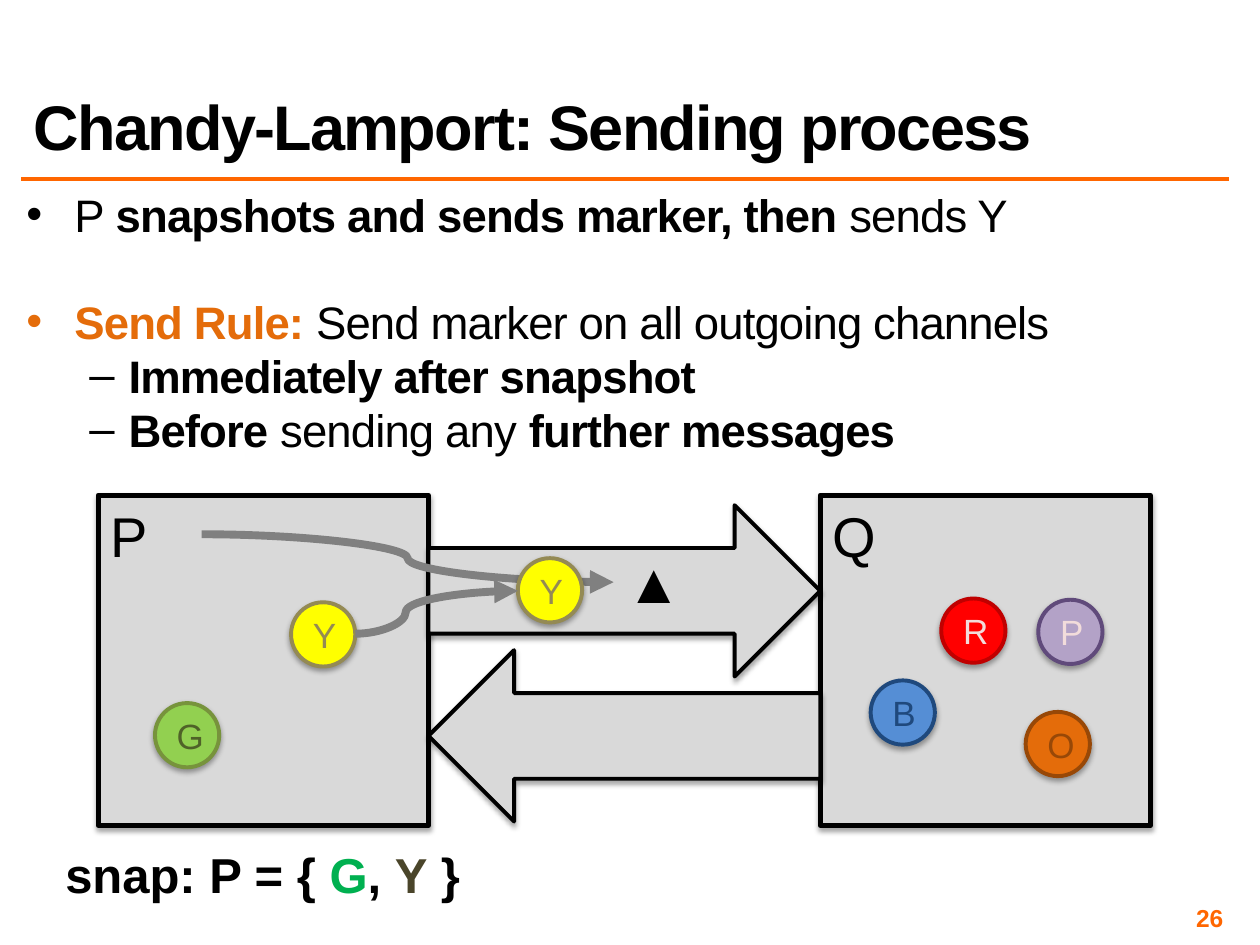
from lxml.etree import SubElement
from pptx import Presentation
from pptx.dml.color import RGBColor
from pptx.enum.shapes import MSO_CONNECTOR, MSO_SHAPE
from pptx.enum.text import MSO_ANCHOR, PP_ALIGN
from pptx.oxml.ns import qn
from pptx.util import Inches, Pt

COLORS = {
    "black": "000000", "gray": "D9D9D9", "curve": "808080", "accent": "FF6600",
    "rule": "E46C0A", "snap_g": "00B050", "snap_y": "4A452A",
}
MESSAGES = {
    "R": ("FF0000", "C00000", "F2DCDB"),
    "G": ("92D050", "77933C", "4F6228"),
    "B": ("558ED5", "1F497D", "1F497D"),
    "Y": ("FFFF00", "948A54", "948A54"),
    "O": ("E46C0A", "984807", "984807"),
    "P": ("B3A2C7", "604A7B", "F2DCDB"),
}


def rgb(color):
    """Return the colour for a name in COLORS or a hex string."""
    return RGBColor.from_string(COLORS.get(color, color))


def add_run(para, text, size, color="black", bold=False, spacing=0):
    """Add one formatted run to a paragraph."""
    span = para.add_run()
    span.text = text
    span.font.name = "Arial"
    span.font.size = Pt(size)
    span.font.bold = bold
    span.font.color.rgb = rgb(color)
    if spacing:
        span.font._element.set("spc", str(int(spacing * 100)))


def add_text_box(page, place, anchor=MSO_ANCHOR.TOP, inset=None, wrap=True):
    """Add a text box and return its text frame."""
    frame = page.shapes.add_textbox(*map(Inches, place)).text_frame
    frame.word_wrap = wrap
    frame.vertical_anchor = anchor
    if inset is not None:
        frame.margin_left = frame.margin_right = Inches(inset)
        frame.margin_top = frame.margin_bottom = Inches(inset)
    return frame


def add_line_of_text(page, place, runs, size, align=PP_ALIGN.CENTER, **frame_options):
    """Add a text box with one paragraph of bold (text, colour) runs."""
    para = add_text_box(page, place, **frame_options).paragraphs[0]
    para.alignment = align
    for text, color in runs:
        add_run(para, text, size, color, bold=True)


def add_bullet(para, mark, left, hang, runs, before=6):
    """Fill a bulleted paragraph with (text, colour, bold) runs."""
    para.line_spacing = 0.8
    para.space_before = Pt(before)
    props = para._p.get_or_add_pPr()
    props.set("marL", str(Inches(left)))
    props.set("indent", str(-Inches(hang)))
    SubElement(props, qn("a:buFont"), typeface="Arial")
    SubElement(props, qn("a:buChar"), char=mark)
    for text, color, bold in runs:
        add_run(para, text, 26, color, bold, spacing=-0.5)


def add_shadowed(page, preset, place, fill, line, width):
    """Add a filled, outlined shape with a soft shadow below it."""
    shape = page.shapes.add_shape(preset, *map(Inches, place))
    shape.fill.solid()
    shape.fill.fore_color.rgb = rgb(fill)
    shape.line.color.rgb = rgb(line)
    shape.line.width = Pt(width)
    shape.shadow.inherit = False
    effects = shape._element.spPr.find(qn("a:effectLst"))
    shadow = SubElement(effects, qn("a:outerShdw"), blurRad=str(Pt(3.1)),
                        dist=str(Pt(1.8)), dir="5400000", rotWithShape="0")
    tint = SubElement(shadow, qn("a:srgbClr"), val=COLORS["black"])
    SubElement(tint, qn("a:alpha"), val="35000")
    return shape


def add_process(page, name, left):
    """Add a process box with its name in the top left corner."""
    box = add_shadowed(page, MSO_SHAPE.RECTANGLE, (left, 3.93, 2.62, 2.62), "gray", "black", 3)
    box.text_frame.vertical_anchor = MSO_ANCHOR.TOP
    para = box.text_frame.paragraphs[0]
    para.alignment = PP_ALIGN.LEFT
    add_run(para, name, 32)


def add_channel(page, top, rotation):
    """Add a block arrow between the two processes."""
    arrow = add_shadowed(page, MSO_SHAPE.RIGHT_ARROW, (3.4, top, 3.11, 1.36), "gray", "black", 2.25)
    arrow.rotation = rotation


def add_message(page, name, left, top):
    """Add a round message token."""
    fill, line, ink = MESSAGES[name]
    token = add_shadowed(page, MSO_SHAPE.OVAL, (left, top, 0.51, 0.51), fill, line, 2.25)
    token.text_frame.vertical_anchor = MSO_ANCHOR.MIDDLE
    para = token.text_frame.paragraphs[0]
    para.alignment = PP_ALIGN.CENTER
    add_run(para, name, 20, ink)


def add_connector(page, kind, ends, color, width):
    """Add a connector without a shadow."""
    connector = page.shapes.add_connector(kind, *map(Inches, ends))
    connector.line.color.rgb = rgb(color)
    connector.line.width = Pt(width)
    SubElement(connector._element.spPr, qn("a:effectLst"))
    return connector


def add_send_curve(page, ends, bend):
    """Add a curved arrow that bends at a share of its width."""
    curve = add_connector(page, MSO_CONNECTOR.CURVE, ends, "curve", 4.5)
    SubElement(curve.line._get_or_add_ln(), qn("a:tailEnd"), type="triangle")
    guides = curve._element.spPr.find(qn("a:prstGeom")).get_or_add_avLst()
    SubElement(guides, qn("a:gd"), name="adj1", fmla=f"val {round(bend * 100000)}")


def add_title(page, text):
    """Add the slide title and the rule under it."""
    add_connector(page, MSO_CONNECTOR.STRAIGHT, (0.17, 1.42, 9.75, 1.42), "accent", 2)
    para = add_text_box(page, (0.17, 0.17, 9.58, 1.17), MSO_ANCHOR.BOTTOM).paragraphs[0]
    para.line_spacing = 0.8
    add_run(para, text, 36, bold=True, spacing=-1)


def add_rules(page):
    """Add the bulleted rules for the sending process."""
    frame = add_text_box(page, (0.17, 1.53, 9.58, 2.28), inset=0.04)
    top, sub = ("•", 0.38, 0.38), ("–", 0.81, 0.31)
    bullets = [
        (top, 6, [("P ", "black", False), ("snapshots and sends marker, then", "black", True),
                  (" sends Y", "black", False)]),
        (top, 36, [("Send Rule: ", "rule", True),
                   ("Send marker on all outgoing channels", "black", False)]),
        (sub, 6, [("Immediately after snapshot", "black", True)]),
        (sub, 6, [("Before", "black", True), (" sending any ", "black", False),
                  ("further messages", "black", True)]),
    ]
    for index, (style, before, runs) in enumerate(bullets):
        para = frame.add_paragraph() if index else frame.paragraphs[0]
        para.level = 1 if style is sub else 0
        add_bullet(para, *style, runs, before)


def main():
    """Build the slide and save it."""
    deck = Presentation()
    deck.slide_width, deck.slide_height = Inches(10), Inches(7.5)
    page = deck.slides.add_slide(deck.slide_layouts[6])

    add_title(page, "Chandy-Lamport: Sending process")
    add_rules(page)
    add_line_of_text(page, (7.42, 7.17, 2.33, 0.23), [("26", "accent")], 14,
                     PP_ALIGN.RIGHT, anchor=MSO_ANCHOR.MIDDLE, inset=0.04)

    for name, left in (("P", 0.78), ("Q", 6.51)):
        add_process(page, name, left)
    for top, rotation in ((4.01, 0), (5.16, 180)):
        add_channel(page, top, rotation)
    for name, left, top in (("R", 7.47, 4.75), ("G", 1.23, 5.58), ("B", 6.91, 5.4),
                            ("Y", 2.31, 4.78), ("O", 8.14, 5.65), ("P", 8.24, 4.76)):
        add_message(page, name, left, top)

    snapshot = [("snap: P = { ", "black"), ("G", "snap_g"), (", ", "black"),
                ("Y", "snap_y"), (" }", "black")]
    add_line_of_text(page, (0.42, 6.65, 3.33, 0.57), snapshot, 28, wrap=False)
    add_line_of_text(page, (4.87, 4.3, 0.65, 0.64), [("▲", "black")], 32, wrap=False)
    add_send_curve(page, (1.6, 4.24, 4.87, 4.62), 0.5)
    add_message(page, "Y", 4.11, 4.43)
    add_send_curve(page, (2.82, 5.03, 4.11, 4.69), 0.31)
    deck.save("out.pptx")


if __name__ == "__main__":
    main()
